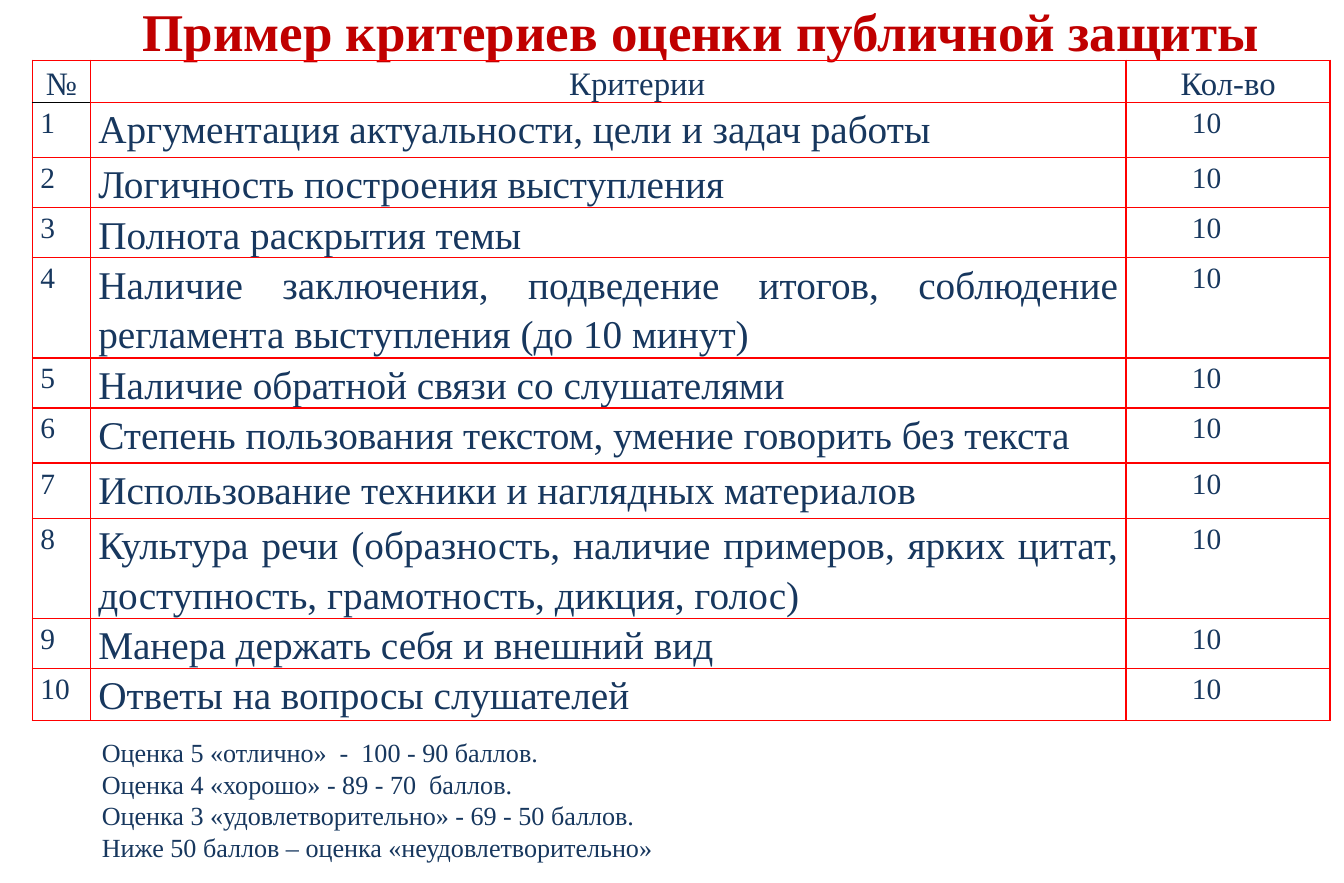
"""Build a slide with the assessment criteria for a public defence."""
import dataclasses

import lxml.etree
import pptx
import pptx.dml.color
import pptx.enum.text
import pptx.oxml.ns
import pptx.util

Cm = pptx.util.Cm
Pt = pptx.util.Pt
Align = pptx.enum.text.PP_ALIGN
Anchor = pptx.enum.text.MSO_ANCHOR


@dataclasses.dataclass(frozen=True)
class Theme:
    """Colours, type sizes and shared measures of the slide."""

    font: str = "Times New Roman"
    heading: str = "C00000"
    ink: str = "17375E"
    grid: str = "FF0000"
    number_rule: str = "000000"
    title_size: float = 32.4
    header_size: float = 20
    criterion_size: float = 24
    score_size: float = 18
    grade_size: float = 16
    indent: float = 1.25
    cell_margin: float = 0.17
    cell_leading: float = 1.27


THEME = Theme()
MAX_SCORE = "10"
HEADERS = ("№", "Критерии", "Кол-во")
HEADER_HEIGHT = 0.91
COLUMN_WIDTHS = (1.25, 22.35, 4.4)
CRITERIA = (
    ("Аргументация актуальности, цели и задач работы", 1.19),
    ("Логичность построения выступления", 1.08),
    ("Полнота раскрытия темы", 1.08),
    ("Наличие заключения, подведение итогов, соблюдение регламента выступления (до 10 минут)", 2.16),
    ("Наличие обратной связи со слушателями", 1.08),
    ("Степень пользования текстом, умение говорить без текста", 1.19),
    ("Использование техники и наглядных материалов", 1.19),
    ("Культура речи (образность, наличие примеров, ярких цитат, доступность, грамотность, дикция, голос)", 2.16),
    ("Манера держать себя и внешний вид", 1.08),
    ("Ответы на вопросы слушателей", 1.13),
)
GRADES = (
    "Оценка 5 «отлично»  -  100 - 90 баллов.",
    "Оценка 4 «хорошо» - 89 - 70  баллов.",
    "Оценка 3 «удовлетворительно» - 69 - 50 баллов.",
    "Ниже 50 баллов – оценка «неудовлетворительно»",
)


def write(paragraph, text, *, size, color=THEME.ink, bold=False, align=Align.LEFT, indent=0, leading=None):
    """Put formatted text into a paragraph, with leading as a multiple of the type size."""
    run = paragraph.add_run()
    run.text = text
    run.font.name = THEME.font
    run.font.size = Pt(size)
    run.font.bold = bold
    run.font.color.rgb = pptx.dml.color.RGBColor.from_string(color)
    paragraph.alignment = align
    paragraph.line_spacing = Pt(size * leading) if leading else None
    properties = paragraph._p.get_or_add_pPr()
    properties.set("marL", "0")
    properties.set("indent", str(Cm(indent)))


def add_text(slide, lines, left, top, width, height, **text_format):
    """Add a text box with one paragraph per line."""
    frame = slide.shapes.add_textbox(Cm(left), Cm(top), Cm(width), Cm(height)).text_frame
    frame.word_wrap = True
    frame.margin_top = frame.margin_bottom = 0
    frame.vertical_anchor = Anchor.MIDDLE
    for position, line in enumerate(lines):
        paragraph = frame.add_paragraph() if position else frame.paragraphs[0]
        write(paragraph, line, indent=THEME.indent, **text_format)


def rule_cell(cell, **edge_colors):
    """Draw the four borders of a cell, red unless an edge names a colour."""
    qn = pptx.oxml.ns.qn
    properties = cell._tc.get_or_add_tcPr()
    for edge in "LRTB":
        line = lxml.etree.SubElement(properties, qn(f"a:ln{edge}"), w=str(Pt(1)))
        fill = lxml.etree.SubElement(line, qn("a:solidFill"))
        lxml.etree.SubElement(fill, qn("a:srgbClr"), val=edge_colors.get(edge, THEME.grid))


def fill_cell(cell, text, *, anchor=Anchor.TOP, edge_colors=None, **text_format):
    """Set the text, margins, borders and empty fill of a cell."""
    cell.margin_left = cell.margin_right = Cm(THEME.cell_margin)
    cell.margin_top = cell.margin_bottom = 0
    cell.vertical_anchor = anchor
    write(cell.text_frame.paragraphs[0], text, leading=THEME.cell_leading, **text_format)
    rule_cell(cell, **(edge_colors or {}))
    cell.fill.background()


def add_criteria_table(slide, left, top):
    """Add the table of numbered criteria and their maximum scores."""
    heights = (HEADER_HEIGHT, *(height for _, height in CRITERIA))
    table = slide.shapes.add_table(
        len(heights), len(HEADERS), Cm(left), Cm(top), Cm(sum(COLUMN_WIDTHS)), Cm(sum(heights))
    ).table
    table.first_row = table.horz_banding = False
    for column, width in zip(table.columns, COLUMN_WIDTHS):
        column.width = Cm(width)
    for row, height in zip(table.rows, heights):
        row.height = Cm(height)

    for column, header in enumerate(HEADERS):
        fill_cell(
            table.cell(0, column), header, anchor=Anchor.MIDDLE, size=THEME.header_size, align=Align.CENTER,
            indent=THEME.indent if column == 1 else 0,
            edge_colors={"B": THEME.number_rule} if column == 0 else None,
        )
    for number, (criterion, _) in enumerate(CRITERIA, start=1):
        entries = (
            (str(number), THEME.score_size, 0),
            (criterion, THEME.criterion_size, 0),
            (MAX_SCORE, THEME.score_size, THEME.indent),
        )
        for column, (text, size, indent) in enumerate(entries):
            under_header = number == 1 and column == 0
            fill_cell(
                table.cell(number, column), text, size=size, indent=indent, align=Align.JUSTIFY,
                edge_colors={"T": THEME.number_rule} if under_header else None,
            )


def main():
    """Build and save the slide."""
    presentation = pptx.Presentation()
    presentation.slide_width, presentation.slide_height = Cm(29), Cm(19.05)
    slide = presentation.slides.add_slide(presentation.slide_layouts[6])
    add_text(
        slide, ["Пример критериев оценки публичной защиты"], 1.45, 0, 26.1, 1.3,
        size=THEME.title_size, color=THEME.heading, bold=True, align=Align.CENTER,
    )
    add_criteria_table(slide, 0.7, 1.3)
    add_text(slide, GRADES, 0.7, 15.75, 28.3, 3, size=THEME.grade_size)
    presentation.save("out.pptx")


if __name__ == "__main__":
    main()
